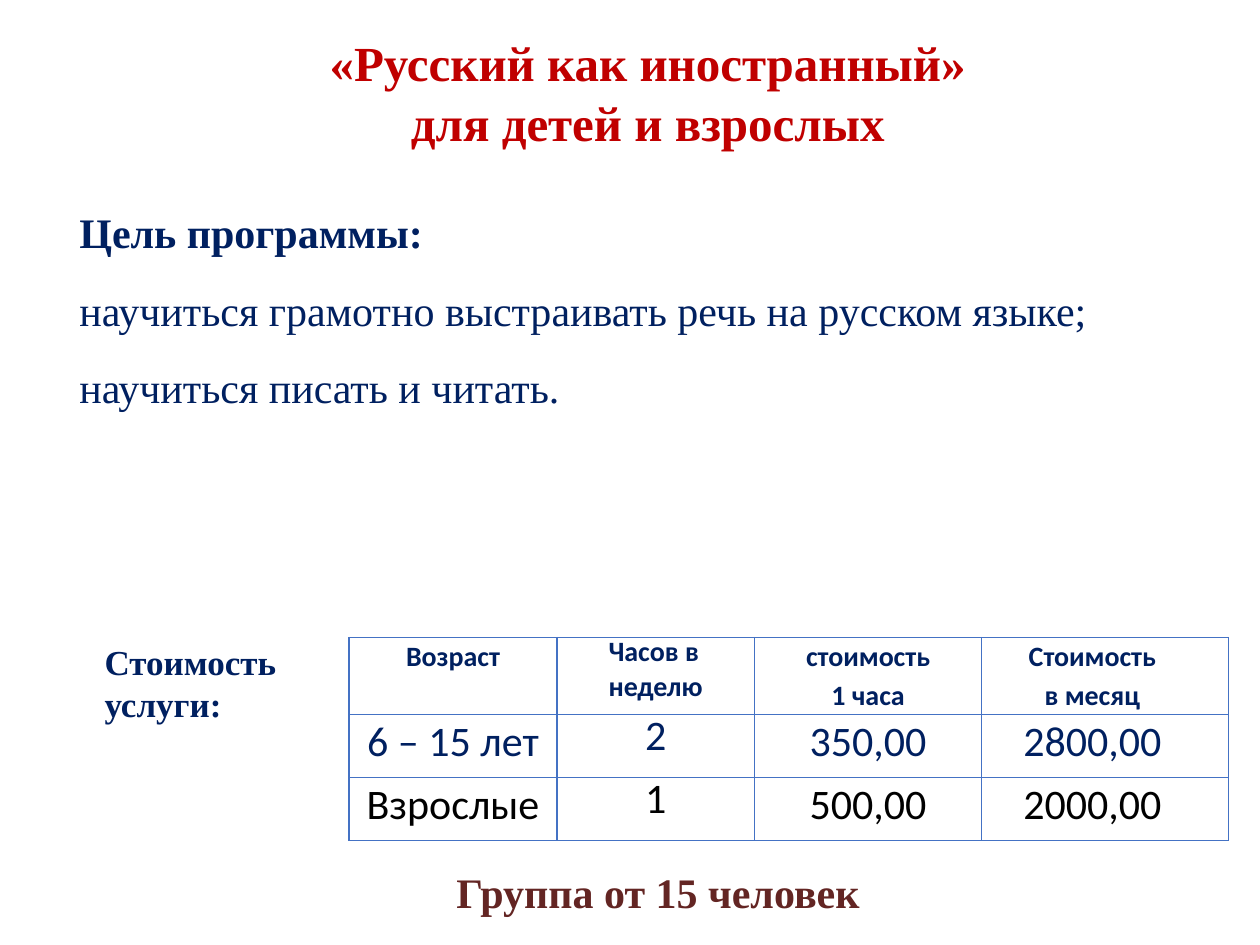
from pptx import Presentation
from pptx.dml.color import RGBColor
from pptx.enum.text import MSO_ANCHOR, MSO_AUTO_SIZE, PP_ALIGN as Align
from pptx.oxml.ns import qn
from pptx.util import Inches, Pt
from lxml.etree import SubElement

NAVY, RED, BROWN, BLUE = "002060", "C00000", "632523", "4472C4"
SERIF, SANS = "Times New Roman", "Calibri"


def rgb(value):
    return RGBColor.from_string(value)


def place(shape, box):
    shape.left, shape.top, shape.width, shape.height = map(Inches, box)


def set_frame(frame, top=0.0, side=0.0):
    frame.word_wrap = True
    frame.auto_size = MSO_AUTO_SIZE.NONE
    frame.vertical_anchor = MSO_ANCHOR.TOP
    frame.margin_left = frame.margin_right = Inches(side)
    frame.margin_top, frame.margin_bottom = Inches(top), 0


def style(paragraph, size, color, font=SERIF, bold=True, align=Align.LEFT,
          line=None, before=0, left=0, right=0):
    properties = paragraph._p.get_or_add_pPr()
    properties.set("marL", str(Inches(left)))
    properties.set("marR", str(Inches(right)))
    properties.set("indent", "0")
    paragraph.alignment = align
    paragraph.space_before = Pt(before)
    if line:
        paragraph.line_spacing = line
    for run in paragraph.runs:
        run.font.name = font
        run.font.size = Pt(size)
        run.font.bold = bold
        run.font.color.rgb = rgb(color)


def add_title(slide, box):
    title = slide.shapes.title
    place(title, box)
    set_frame(title.text_frame, top=0.07)
    title.text_frame.text = "«Русский как иностранный»\vдля детей и взрослых"
    style(title.text_frame.paragraphs[0], 28, RED, align=Align.CENTER,
          line=Pt(34.6))


def add_goals(slide, box):
    goals = slide.placeholders[1]
    place(goals, box)
    set_frame(goals.text_frame, top=0.02)
    goals.text_frame.text = "\n".join([
        "Цель программы:",
        "научиться грамотно выстраивать речь на русском языке;",
        "научиться писать и читать.",
    ])
    for index, goal in enumerate(goals.text_frame.paragraphs):
        SubElement(goal._p.get_or_add_pPr(), qn("a:buNone"))
        style(goal, 24, NAVY, bold=index == 0, align=Align.JUSTIFY, line=1.5,
              before=1 if index else 0, left=0.4)


def add_label(slide, box, text, size, color, align, line=None, top=0.0, side=0.0):
    label = slide.shapes.add_textbox(*map(Inches, box))
    set_frame(label.text_frame, top, side)
    label.text_frame.text = text
    for paragraph in label.text_frame.paragraphs:
        style(paragraph, size, color, align=align, line=line)


def outline(cell):
    properties = cell._tc.get_or_add_tcPr()
    for side in ("a:lnL", "a:lnR", "a:lnT", "a:lnB"):
        border = SubElement(properties, qn(side), w=str(Pt(1)))
        fill = SubElement(border, qn("a:solidFill"))
        SubElement(fill, qn("a:srgbClr"), val=BLUE)
    cell.fill.background()


def fill_cell(cell, text, column, header, color):
    outline(cell)
    hours = column == 1
    cell.margin_left = cell.margin_right = cell.margin_bottom = 0
    cell.margin_top = 0 if hours else Inches(0.02)
    cell.text = text
    for index, paragraph in enumerate(cell.text_frame.paragraphs):
        if header:
            layout = dict(before=2.9 if index and not hours else 0)
        else:
            layout = dict(line=Pt(27.4) if hours else None)
        if header and hours:
            layout.update(left=0.41, line=None if index else Pt(18.2))
        else:
            layout.update(align=Align.CENTER, right=0.2 if column == 3 else 0)
        style(paragraph, 16 if header else 24, color, SANS, header, **layout)


def add_prices(slide, box):
    rows = [
        ["Возраст", "Часов в\nнеделю", "стоимость\n1 часа", "Стоимость\nв месяц"],
        ["6 – 15 лет", "2", "350,00", "2800,00"],
        ["Взрослые", "1", "500,00", "2000,00"],
    ]
    prices = slide.shapes.add_table(3, 4, *map(Inches, box)).table
    prices.first_row = prices.horz_banding = False
    for column, width in zip(prices.columns, (1.65, 1.57, 1.8, 1.96)):
        column.width = Inches(width)
    for row, height in zip(prices.rows, (0.61, 0.5, 0.5)):
        row.height = Inches(height)
    for r, (texts, color) in enumerate(zip(rows, (NAVY, NAVY, "000000"))):
        for c, text in enumerate(texts):
            fill_cell(prices.cell(r, c), text, c, r == 0, color)


def main():
    deck = Presentation()
    deck.slide_width, deck.slide_height = Inches(10), Inches(7.5)
    slide = deck.slides.add_slide(deck.slide_layouts[1])
    add_title(slide, (0.53, 0.17, 9.22, 1.06))
    add_goals(slide, (0.23, 1.42, 9.58, 1.86))
    add_prices(slide, (2.77, 5.06, 6.98, 1.61))
    add_label(slide, (0.83, 5.08, 1.39, 0.67), "Стоимость\nуслуги:", 20, NAVY,
              Align.LEFT, line=Pt(24))
    add_label(slide, (3.5, 6.83, 3.42, 0.5), "Группа от 15 человек", 24, BROWN,
              Align.RIGHT, top=0.05, side=0.1)
    deck.save("out.pptx")


if __name__ == "__main__":
    main()
